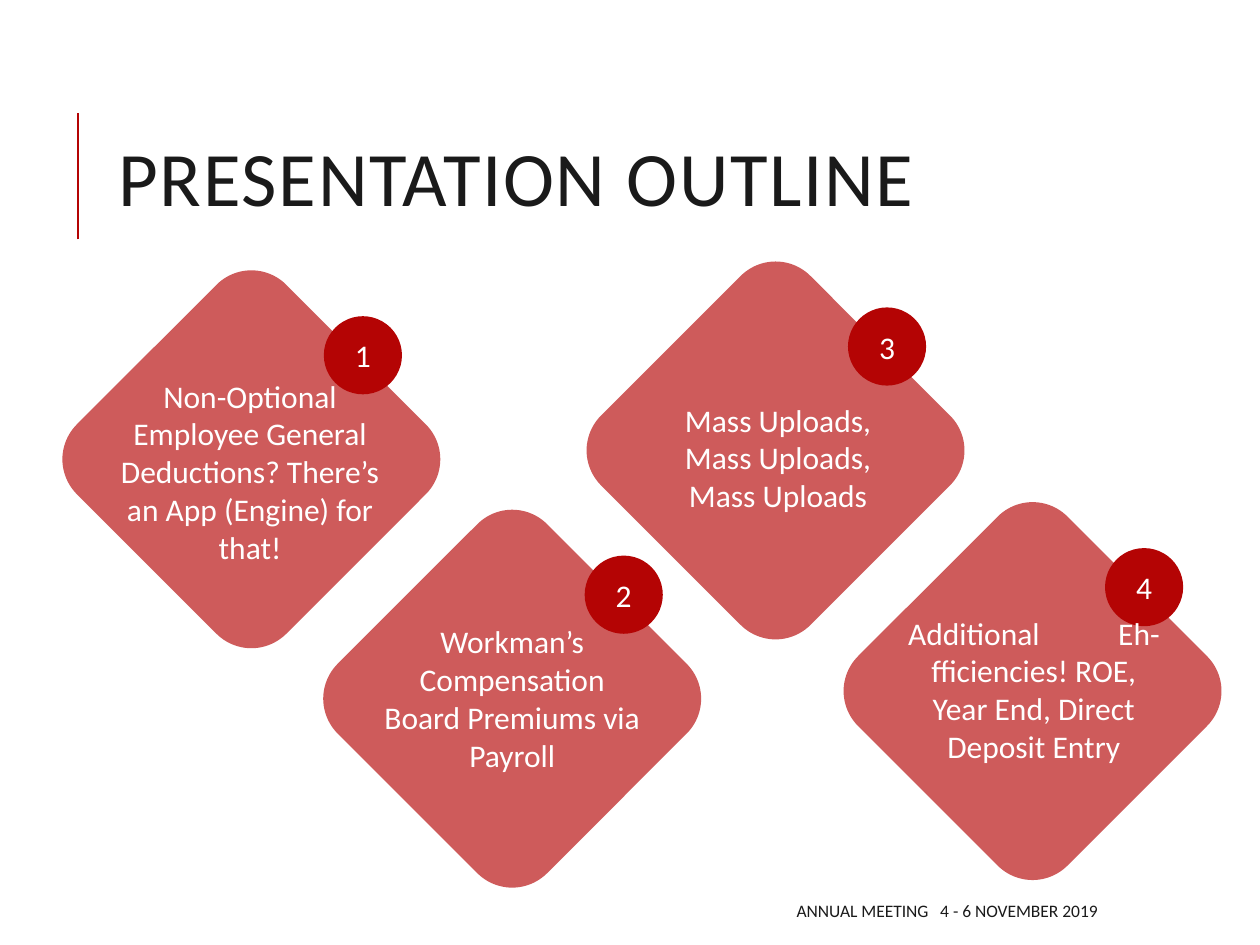
from pptx import Presentation
from pptx.dml.color import RGBColor
from pptx.enum import shapes, text
from pptx.oxml import parse_xml
from pptx.oxml.ns import nsdecls, qn
from pptx.util import Inches, Pt

HUES = {"red": "B40404", "ink": "1A1A1A", "white": "FFFFFF"}
FONT = "Calibri"
SIDE, DOT = 2.35, 0.62

# Content: a bar marks a widened space
TITLE = "PRESENTATION OUTLINE"
FOOTER = "ANNUAL MEETING|4 - 6 NOVEMBER 2019"
# Diamond left and top, label box, label
TOPICS = [
    ((0.82, 2.47), (0.85, 2.94, 2.27, 1.62),
     "Non-Optional Employee General Deductions? There’s an App (Engine) for that!"),
    ((2.89, 4.37), (2.94, 4.89, 2.25, 1.31),
     "Workman’s Compensation Board Premiums via Payroll"),
    ((4.98, 2.40), (5.05, 3.13, 2.25, 1.01),
     "Mass Uploads, Mass Uploads, Mass Uploads"),
    ((7.02, 4.31), (7.07, 4.82, 2.27, 1.31),
     "Additional|Eh-fficiencies! ROE, Year End, Direct Deposit Entry"),
]

deck = Presentation()
deck.slide_width, deck.slide_height = Inches(10), Inches(7.5)
slide = deck.slides.add_slide(deck.slide_layouts[6])


def color(name):
    return RGBColor.from_string(HUES[name])


def write(shape, words, size, hue, align, anchor, gap=0):
    """Fill a shape with one paragraph; gap is the extra space in points."""
    frame = shape.text_frame
    frame.word_wrap = True
    frame.vertical_anchor = anchor
    para = frame.paragraphs[0]
    para.alignment = align
    for i, part in enumerate(words.split("|")):
        if i:
            space = para.add_run()
            space.text = " "
            space._r.get_or_add_rPr().set("spc", str(int(gap * 100)))
        para.add_run().text = part
    for run in para.runs:
        run.font.name, run.font.size = FONT, Pt(size)
        run.font.color.rgb = color(hue)
    return para


def box(*at):
    return slide.shapes.add_textbox(*map(Inches, at))


def solid(kind, *at):
    shape = slide.shapes.add_shape(kind, *map(Inches, at))
    shape.shadow.inherit = False
    shape.fill.solid()
    shape.fill.fore_color.rgb = color("red")
    shape.line.fill.background()
    return shape


MID, TOP = text.MSO_ANCHOR.MIDDLE, text.MSO_ANCHOR.TOP
LEFT, CENTER, RIGHT = (text.PP_ALIGN.LEFT, text.PP_ALIGN.CENTER,
                       text.PP_ALIGN.RIGHT)

# Title and its rule
rule = slide.shapes.add_connector(
    shapes.MSO_CONNECTOR.STRAIGHT, *map(Inches, (0.62, 1.9, 0.62, 0.9)))
rule.line.color.rgb = color("red")
rule.line.width = Pt(1.5)
rule._element.spPr.append(parse_xml(f"<a:effectLst {nsdecls('a')}/>"))

head = write(box(0.84, 0.64, 7.97, 1.64), TITLE, 44, "ink", LEFT, MID)
head.line_spacing = 0.8
head.runs[0]._r.get_or_add_rPr().set("spc", "100")

# Numbered diamonds
for num, ((x, y), area, label) in enumerate(TOPICS, 1):
    gem = solid(shapes.MSO_SHAPE.ROUNDED_RECTANGLE, x, y, SIDE, SIDE)
    gem.rotation = 45
    tint = gem._element.spPr.find(qn("a:solidFill"))[0]
    tint.append(parse_xml(f'<a:alpha {nsdecls("a")} val="65000"/>'))
    dot = solid(shapes.MSO_SHAPE.OVAL, x + 1.75, y + 0.04, DOT, DOT)
    write(dot, str(num), 18, "white", CENTER, MID)
    write(box(*area), label, 18, "white", CENTER, TOP, gap=40.7)

# Footer
write(box(3.97, 7.08, 4.84, 0.3), FOOTER, 10, "ink", RIGHT, MID, gap=4.5)

deck.save("out.pptx")
